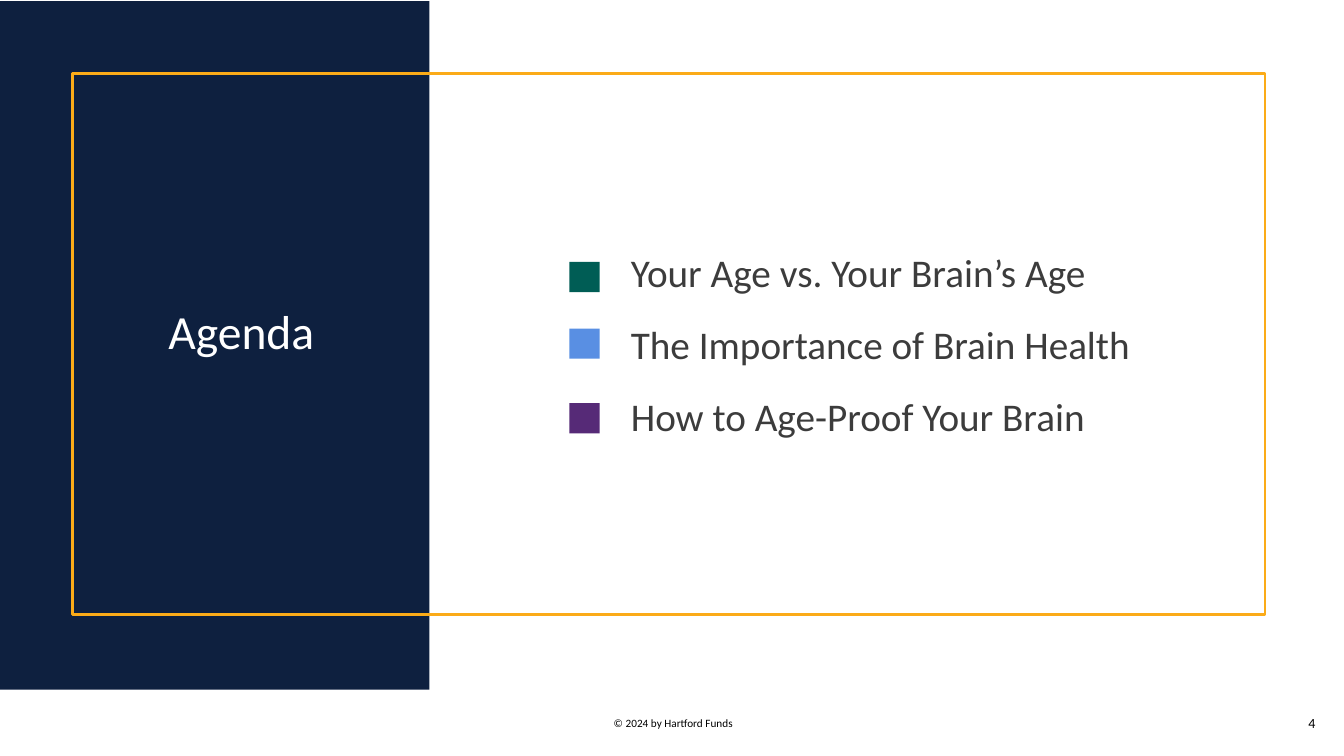
from pptx import Presentation
from pptx import util as u
from pptx.dml.color import RGBColor
from pptx.enum import shapes, text

FONT = "Calibri"
COLORS = {
    "navy": "0E203F",
    "gold": "FBAB18",
    "green": "005D55",
    "blue": "598FE3",
    "purple": "562A77",
    "gray": "3C3C3C",
    "white": "FFFFFF",
    "black": "000000",
}
# Topic, marker colour, marker top in cm
TOPICS = [
    ("Your Age vs. Your Brain’s Age", "green", 6.6),
    ("The Importance of Brain Health", "blue", 8.28),
    ("How to Age-Proof Your Brain", "purple", 10.16),
]


def color(name):
    return RGBColor.from_string(COLORS[name])


def add_rect(page, left, top, width, height, fill=None, line=None):
    box = page.shapes.add_shape(shapes.MSO_SHAPE.RECTANGLE,
                                u.Cm(left), u.Cm(top), u.Cm(width), u.Cm(height))
    box.shadow.inherit = False
    if fill:
        box.fill.solid()
        box.fill.fore_color.rgb = color(fill)
    else:
        box.fill.background()
    if line:
        box.line.color.rgb = color(line)
        box.line.width = u.Pt(2)
    else:
        box.line.fill.background()
    return box


def add_text(page, left, top, width, height):
    return page.shapes.add_textbox(u.Cm(left), u.Cm(top), u.Cm(width), u.Cm(height))


def write(box, lines, size, tint, align=text.PP_ALIGN.LEFT,
          anchor=text.MSO_ANCHOR.TOP, after=0):
    frame = box.text_frame
    frame.word_wrap = True
    frame.auto_size = text.MSO_AUTO_SIZE.NONE
    frame.vertical_anchor = anchor
    for index, line in enumerate(lines):
        para = frame.paragraphs[0] if index == 0 else frame.add_paragraph()
        para.alignment = align
        para.space_after = u.Pt(after)
        span = para.add_run()
        span.text = line
        span.font.name = FONT
        span.font.size = u.Pt(size)
        span.font.color.rgb = color(tint)


def place_title(page, line):
    title = page.shapes.title
    title.left, title.top = u.Cm(3.99), u.Cm(7.47)
    title.width, title.height = u.Cm(5.99), u.Cm(2.44)
    write(title, [line], 34, "white")


def add_topics(page):
    box = add_text(page, 14.07, 6.12, 17.17, 5.13)
    box.text_frame.margin_left = u.Cm(1.83)  # room for the markers
    write(box, [topic for topic, _, _ in TOPICS], 28, "gray", after=18)
    for _, tint, top in TOPICS:
        add_rect(page, 14.35, top, 0.76, 0.76, fill=tint)


def add_footer(page):
    middle = text.MSO_ANCHOR.MIDDLE
    write(add_text(page, 3.18, 17.4, 27.58, 1.63), ["© 2024 by Hartford Funds"],
          8, "black", text.PP_ALIGN.CENTER, middle)
    write(add_text(page, 25.5, 17.4, 7.9, 1.63), ["4"],
          10, "black", text.PP_ALIGN.RIGHT, middle)


def main():
    deck = Presentation()
    deck.slide_width, deck.slide_height = u.Cm(33.87), u.Cm(19.05)
    page = deck.slides.add_slide(deck.slide_layouts[5])

    # Navy panel, sent behind the title
    panel = add_rect(page, 0, 0.03, 10.82, 17.35, fill="navy")
    page.shapes.title.element.addprevious(panel.element)
    place_title(page, "Agenda")

    # Agenda list and its markers
    add_topics(page)

    # Footer and frame
    add_footer(page)
    add_rect(page, 1.83, 1.85, 30.05, 13.64, line="gold")

    deck.save("out.pptx")


if __name__ == "__main__":
    main()
